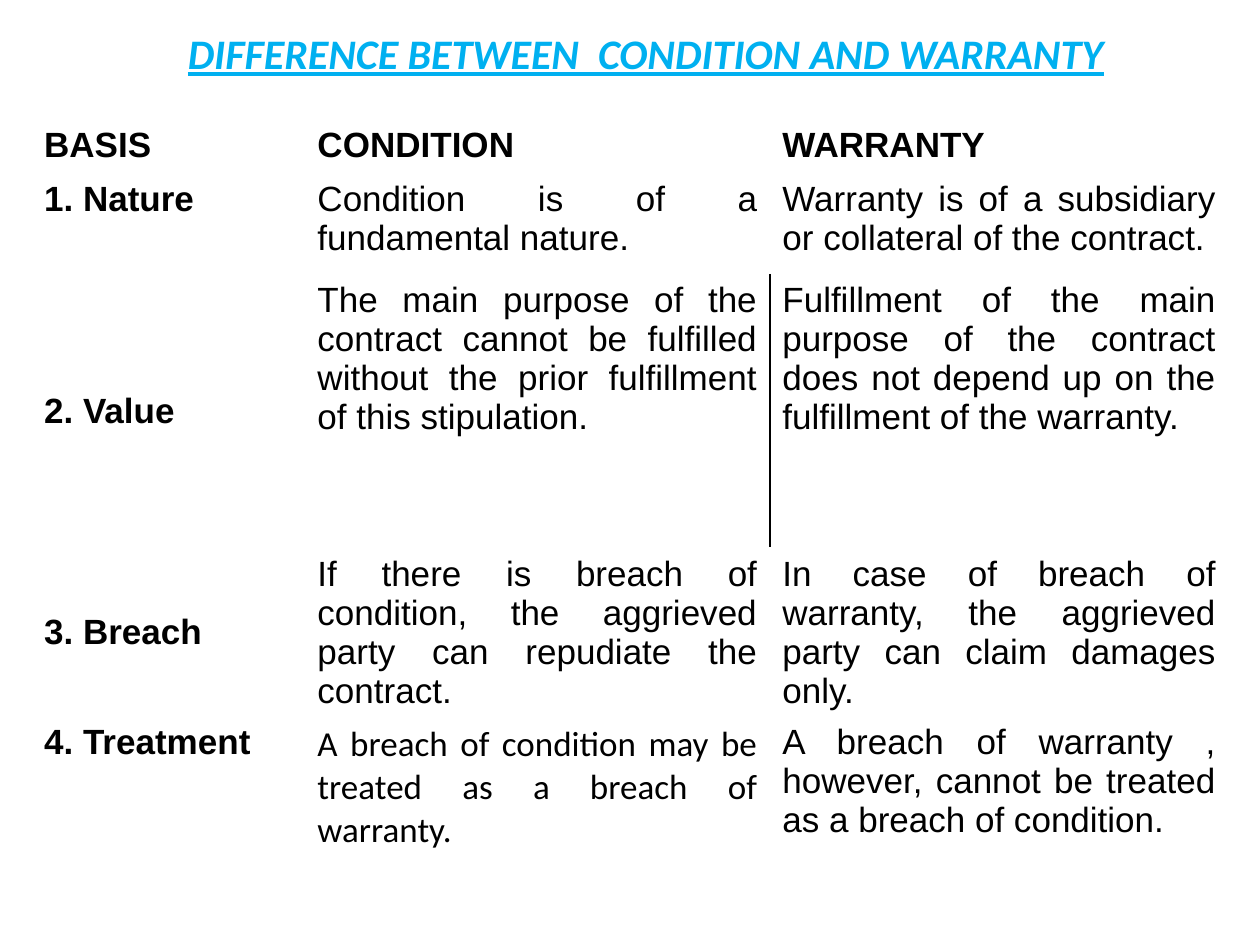
from lxml.etree import SubElement
from pptx import Presentation
from pptx.dml.color import RGBColor
from pptx.enum.text import MSO_ANCHOR as ANCHOR, PP_ALIGN as ALIGN
from pptx.oxml.ns import qn
from pptx.util import Inches, Pt

COLORS = {"title": "00B0F0", "text": "000000", "paper": "FFFFFF", "rule": "000000"}
COL_WIDTHS = [2.17, 3.69, 3.64]
ROW_HEIGHTS = [0.46, 0.8, 2.17, 1.14, 1.84]
ROWS = [
    ("BASIS ", "CONDITION", "WARRANTY"),
    ("1. Nature",
     "Condition is of a fundamental nature.",
     "Warranty is of a subsidiary or collateral of the contract. "),
    ("2. Value",
     "The main purpose of the contract cannot be fulfilled without the prior "
     "fulfillment of this stipulation. ",
     "Fulfillment of the main purpose of the contract does not depend up on the "
     "fulfillment of the warranty. "),
    ("3. Breach ",
     "If there is breach of condition, the aggrieved party can repudiate the contract.",
     "In case of breach of warranty, the aggrieved party can claim damages only."),
    ("4. Treatment",
     "A breach of condition may be treated as a breach of warranty.",
     "A breach of warranty , however, cannot be treated as a breach of condition. "),
]
HEADER, NATURE, VALUE, BREACH, TREATMENT = range(5)
BASIS, CONDITION, WARRANTY = range(3)


def rgb(name):
    return RGBColor.from_string(COLORS[name])


def add_run(p, text, size, font, color, bold=False):
    r = p.add_run()
    r.text = text
    r.font.size, r.font.name, r.font.bold = Pt(size), font, bold
    r.font.color.rgb = rgb(color)
    return r


def add_title(slide, text):
    sp = slide.shapes.title
    sp.left, sp.top, sp.width, sp.height = map(Inches, (0, 0.17, 10.25, 0.5))
    tf = sp.text_frame
    tf.word_wrap = True
    tf.vertical_anchor = ANCHOR.MIDDLE
    p = tf.paragraphs[0]
    p.alignment = ALIGN.CENTER
    r = add_run(p, text, 24, "Calibri", "title", bold=True)
    r.font.italic = r.font.underline = True


def set_borders(cell, row, col):
    """White borders, with a black rule between the two value cells."""
    black_side = {(VALUE, CONDITION): "R", (VALUE, WARRANTY): "L"}.get((row, col))
    tc_pr = cell._tc.get_or_add_tcPr()
    for i, side in enumerate("LRTB"):
        thick = (row, side) in ((HEADER, "B"), (NATURE, "T"))
        ln = SubElement(tc_pr, qn(f"a:ln{side}"), w=str(Pt(3 if thick else 1)))
        fill = SubElement(ln, qn("a:solidFill"))
        color = COLORS["rule" if side == black_side else "paper"]
        SubElement(fill, qn("a:srgbClr"), val=color)
        tc_pr.insert(i, ln)


def fill_cell(cell, text, row, col):
    cell.fill.solid()
    cell.fill.fore_color.rgb = rgb("paper")
    set_borders(cell, row, col)
    middle = row == HEADER or (col == BASIS and row in (VALUE, BREACH))
    cell.vertical_anchor = ANCHOR.MIDDLE if middle else ANCHOR.TOP
    p = cell.text_frame.paragraphs[0]
    p.alignment = ALIGN.JUSTIFY
    if (row, col) == (NATURE, BASIS):
        p_pr = p._p.get_or_add_pPr()
        p_pr.set("marL", str(Inches(0.38)))
        p_pr.set("indent", str(Inches(-0.38)))
    font = "Calibri" if (row, col) == (TREATMENT, CONDITION) else "Arial"
    add_run(p, text, 20, font, "text", bold=row == HEADER or col == BASIS)


def add_comparison(slide):
    frame = slide.shapes.add_table(len(ROWS), len(COL_WIDTHS), Inches(0.25), Inches(0.92),
                                   Inches(sum(COL_WIDTHS)), Inches(sum(ROW_HEIGHTS)))
    table = frame.table
    for column, width in zip(table.columns, COL_WIDTHS):
        column.width = Inches(width)
    for row, height in zip(table.rows, ROW_HEIGHTS):
        row.height = Inches(height)
    for i, texts in enumerate(ROWS):
        for j, text in enumerate(texts):
            fill_cell(table.cell(i, j), text, i, j)


def main():
    prs = Presentation()
    prs.slide_width, prs.slide_height = Inches(10), Inches(7.5)
    slide = prs.slides.add_slide(prs.slide_layouts[5])
    add_title(slide, "DIFFERENCE BETWEEN  CONDITION AND WARRANTY")
    add_comparison(slide)
    prs.save("out.pptx")


if __name__ == "__main__":
    main()
